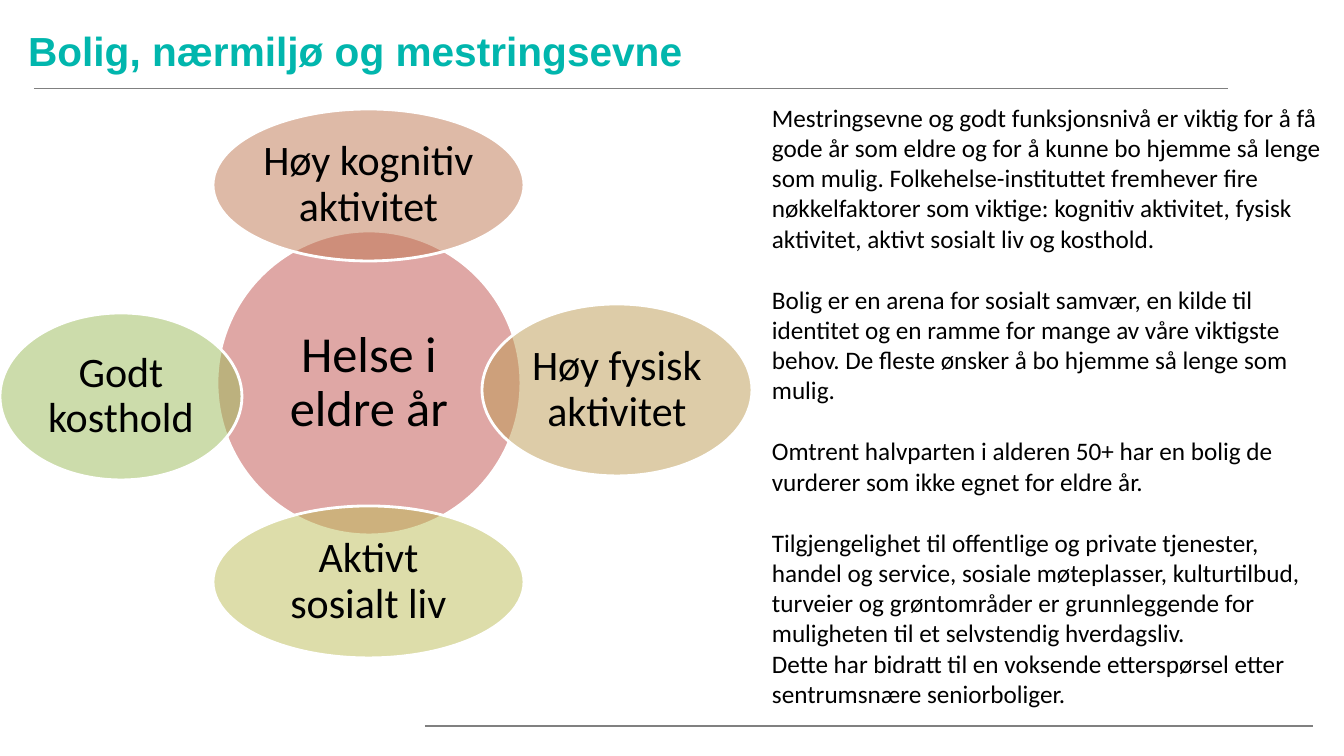
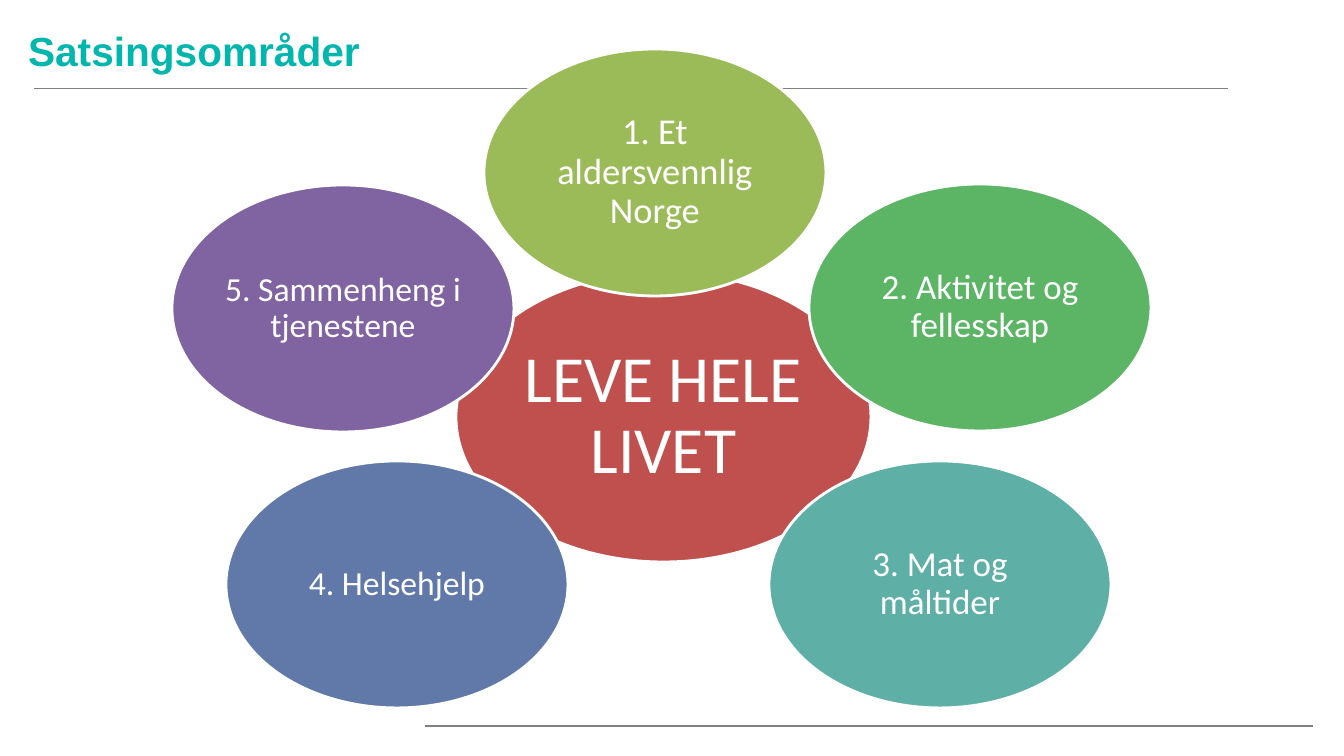
import pptx
import pptx.util
import pptx.dml.color
import pptx.enum.shapes
import pptx.enum.text
import pptx.oxml
import pptx.oxml.ns
import lxml.etree

SCALE = 914400 / 100.8
INK = {
    "title": "01B6AD", "rule": "808080", "black": "000000", "white": "FFFFFF",
    "red": "C0504D", "rust": "BF7750", "sand": "BD9B53", "olive": "BCBC56",
    "lime": "9BBB59", "green": "5CB565", "teal": "5EAFA6", "blue": "6179A8",
    "plum": "8064A2",
}
Pt = pptx.util.Pt
qn = pptx.oxml.ns.qn
align = pptx.enum.text.PP_ALIGN
anchor = pptx.enum.text.MSO_ANCHOR


def px(*nums):
    return [round(n * SCALE) for n in nums]


def rgb(name):
    return pptx.dml.color.RGBColor.from_string(INK[name])


deck = pptx.Presentation()
deck.slide_width, deck.slide_height = px(1344, 756)
layout = deck.slide_layouts[5]

# Slides with their titles
slides = []
for text in ["Bolig, nærmiljø og mestringsevne", "Satsingsområder"]:
    slide = deck.slides.add_slide(layout)
    title = slide.shapes.title
    title.left, title.top, title.width, title.height = px(18, 22, 1133, 56)
    frame = title.text_frame
    frame.auto_size = pptx.enum.text.MSO_AUTO_SIZE.NONE
    frame.vertical_anchor = anchor.MIDDLE
    para = frame.paragraphs[0]
    para.alignment = align.LEFT
    run = para.add_run()
    run.text = text
    run.font.name, run.font.size, run.font.bold = "Arial", Pt(29), True
    run.font.color.rgb = rgb("title")
    slides.append(slide)

# Shared rules, placed on the layout
for left, right, y, width in [(34, 1228, 88, 0.5), (425, 1313, 726, 0.75)]:
    rule = slides[0].shapes.add_connector(
        pptx.enum.shapes.MSO_CONNECTOR.STRAIGHT, *px(left, y, right, y))
    rule.line.color.rgb = rgb("rule")
    rule.line.width = Pt(width)
    lxml.etree.SubElement(rule.element.spPr, qn("a:effectLst"))
    layout.shapes.element.append(rule.element)

# Ovals: text, place, fill, text size, inset
health = [
    ("Helse i eldre år", (217, 231, 304, 304), "red", 36, 5),
    ("Høy kognitiv aktivitet", (213, 109, 311, 152), "rust", 30, 4),
    ("Høy fysisk aktivitet", (482, 304, 270, 172), "sand", 30, 4),
    ("Aktivt sosialt liv", (213, 506, 311, 152), "olive", 30, 4),
    ("Godt kosthold", (0, 313, 242, 167), "lime", 30, 4),
]
W, H = 342, 247
areas = [
    ("LEVE HELE LIVET", (456, 272, 415, 290), "red", 47, 3),
    ("1. Et aldersvennlig Norge", (484, 49, W, H), "lime", 26, 2),
    ("2. Aktivitet og fellesskap", (809, 184, W, H), "green", 25, 2),
    ("3. Mat og måltider", (769, 461, W, H), "teal", 25, 2),
    ("4. Helsehjelp", (226, 461, W, H), "blue", 24, 2),
    ("5. Sammenheng i tjenestene", (172, 185, W, H), "plum", 24, 2),
]
for slide, ovals, ink, clear in [(slides[0], health, "black", True),
                                 (slides[1], areas, "white", False)]:
    for text, box, fill, size, inset in ovals:
        oval = slide.shapes.add_shape(
            pptx.enum.shapes.MSO_SHAPE.OVAL, *px(*box))
        oval.shadow.inherit = False
        oval.fill.solid()
        oval.fill.fore_color.rgb = rgb(fill)
        if clear:
            tone = oval.element.spPr.find(qn("a:solidFill"))[0]
            lxml.etree.SubElement(tone, qn("a:alpha"), val="50000")
        oval.line.color.rgb = rgb("white")
        oval.line.width = Pt(2)
        frame = oval.text_frame
        frame.word_wrap = True
        frame.vertical_anchor = anchor.MIDDLE
        pad = px(inset)[0]
        frame.margin_left = frame.margin_right = pad
        frame.margin_top = frame.margin_bottom = pad
        para = frame.paragraphs[0]
        para.alignment = align.CENTER
        para.line_spacing = 0.9
        run = para.add_run()
        run.text = text
        run.font.name, run.font.size = "Calibri", Pt(size)
        run.font.color.rgb = rgb(ink)

# Body text: space before, wording
body = [
    (0, "Mestringsevne og godt funksjonsnivå er viktig for å få gode år som "
        "eldre og for å kunne bo hjemme så lenge som mulig. "
        "Folkehelse-instituttet fremhever fire nøkkelfaktorer som viktige: "
        "kognitiv aktivitet, fysisk aktivitet, aktivt sosialt liv og kosthold."),
    (22, "Bolig er en arena for sosialt samvær, en kilde til identitet og en "
         "ramme for mange av våre viktigste behov. De fleste ønsker å bo "
         "hjemme så lenge som mulig."),
    (22, "Omtrent halvparten i alderen 50+ har en bolig de vurderer som ikke "
         "egnet for eldre år."),
    (22, "Tilgjengelighet til offentlige og private tjenester, handel og "
         "service, sosiale møteplasser, kulturtilbud, turveier og "
         "grøntområder er grunnleggende for muligheten til et selvstendig "
         "hverdagsliv."),
    (0, "Dette har bidratt til en voksende etterspørsel etter sentrumsnære "
        "seniorboliger."),
]
frame = slides[0].shapes.add_textbox(*px(762, 97, 582, 621)).text_frame
frame.word_wrap = True
for i, (gap, text) in enumerate(body):
    para = frame.add_paragraph() if i else frame.paragraphs[0]
    if gap:
        para.space_before = Pt(gap)
    run = para.add_run()
    run.text = text
    run.font.name, run.font.size = "Calibri", Pt(18)
    run.font.color.rgb = rgb("black")

deck.save("out.pptx")
